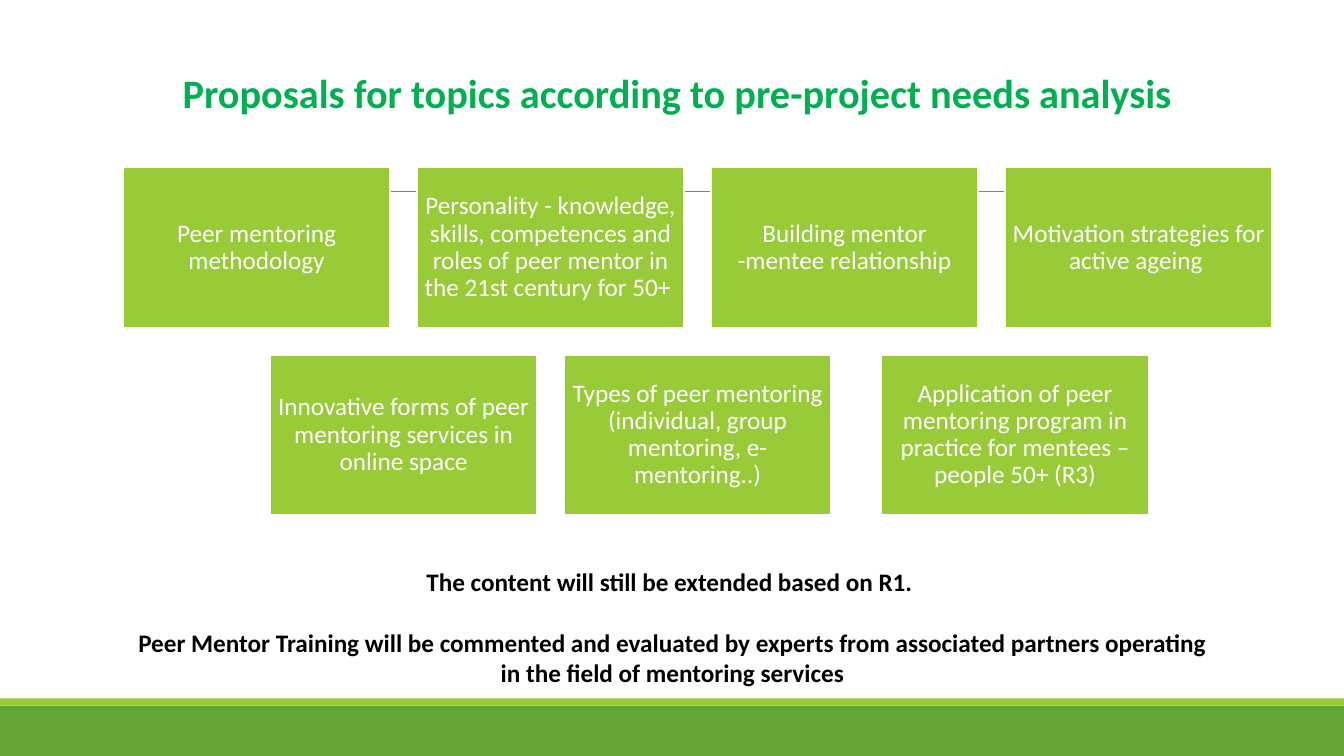
from pptx import Presentation
from pptx.dml.color import RGBColor
from pptx.enum.shapes import MSO_CONNECTOR, MSO_SHAPE
from pptx.enum.text import MSO_ANCHOR, MSO_AUTO_SIZE, PP_ALIGN
from pptx.oxml.ns import qn
from pptx.util import Inches, Pt

RECTANGLE = MSO_SHAPE.RECTANGLE
STRAIGHT = MSO_CONNECTOR.STRAIGHT
CENTER = PP_ALIGN.CENTER
MIDDLE, BOTTOM, TOP = MSO_ANCHOR.MIDDLE, MSO_ANCHOR.BOTTOM, MSO_ANCHOR.TOP
NO_AUTOFIT = MSO_AUTO_SIZE.NONE

FONT = "Calibri"
WIDTH, HEIGHT = 13.33, 7.5
LEFT = 1.22

# Card grid, in inches
CARD_WIDTH, CARD_HEIGHT = 2.65, 1.59
COLUMN_STEP = 2.916
ROW_TOP, ROW_STEP = 1.66, 1.86

# Each topic: column, row, wording
TOPICS = [
    (0, 0, "Peer mentoring methodology"),
    (1, 0, "Personality - knowledge, skills, competences and roles of "
           "peer mentor in the 21st century for 50+ "),
    (2, 0, "Building mentor\v-mentee relationship"),
    (3, 0, "Motivation strategies for active ageing "),
    (0.5, 1, "Innovative forms of peer mentoring services in online space"),
    (1.5, 1, "Types of peer mentoring (individual, group mentoring, "
             "e-mentoring..)"),
    (2.58, 1, "Application of peer mentoring program in practice for "
              "mentees – people 50+ (R3)"),
]

CLOSING = [
    "The content will still be extended based on R1. ",
    "Peer Mentor Training will be commented and evaluated by experts from "
    "associated partners operating in the field of mentoring services",
]


def color(hex_value):
    return RGBColor.from_string(hex_value)


def write(shape, texts, size, hex_value, bold=False, anchor=MIDDLE,
          inset=(0.1, 0.05), line_spacing=1.0, gap=0):
    """Fill a shape with centred paragraphs, parted by gap points."""
    frame = shape.text_frame
    frame.word_wrap = True
    frame.auto_size = NO_AUTOFIT
    frame.vertical_anchor = anchor
    frame.margin_left = frame.margin_right = Inches(inset[0])
    frame.margin_top = frame.margin_bottom = Inches(inset[1])
    for index, text in enumerate(texts):
        para = frame.add_paragraph() if index else frame.paragraphs[0]
        para.text = text
        para.alignment = CENTER
        para.line_spacing = line_spacing
        para.space_before = Pt(gap if index else 0)
        para.font.name = FONT
        para.font.size = Pt(size)
        para.font.bold = bold
        para.font.color.rgb = color(hex_value)


def add_block(page, left, top, width, height, fill, outline=None):
    block = page.shapes.add_shape(RECTANGLE, Inches(left), Inches(top),
                                  Inches(width), Inches(height))
    block.shadow.inherit = False
    block.fill.solid()
    block.fill.fore_color.rgb = color(fill)
    if outline:
        block.line.color.rgb = color(outline)
        block.line.width = Pt(1.25)
    else:
        block.line.fill.background()
    return block


def add_rule(page, left, right, top):
    rule = page.shapes.add_connector(STRAIGHT, Inches(left), Inches(top),
                                     Inches(right), Inches(top))
    rule.line.color.rgb = color("7F7F7F")
    rule.line.width = Pt(0.75)
    properties = rule._element.spPr
    properties.append(properties.makeelement(qn("a:effectLst"), {}))


def add_title(page, text):
    title = page.shapes.title
    title.left, title.top = Inches(LEFT), Inches(0.73)
    title.width, title.height = Inches(11), Inches(0.48)
    write(title, [text], 28.8, "00B050", bold=True, anchor=BOTTOM,
          line_spacing=0.85)


def add_card(page, column, row, text):
    card = add_block(page, LEFT + column * COLUMN_STEP,
                     ROW_TOP + row * ROW_STEP, CARD_WIDTH, CARD_HEIGHT,
                     "98CB37", outline="FFFFFF")
    write(card, [text], 18, "FFFFFF", inset=(0.07, 0.07), line_spacing=0.9)


def add_closing(page, texts):
    box = page.shapes.add_textbox(Inches(LEFT), Inches(5.57),
                                  Inches(10.9), Inches(1.62))
    write(box, texts, 18, "000000", bold=True, anchor=TOP, gap=22)


def main():
    deck = Presentation()
    deck.slide_width, deck.slide_height = Inches(WIDTH), Inches(HEIGHT)
    page = deck.slides.add_slide(deck.slide_layouts[5])

    # Footer bands and the rule behind the cards
    add_block(page, 0, 7, WIDTH, 0.5, "63A537")
    add_block(page, 0, 6.93, WIDTH, 0.07, "99CB38")
    add_rule(page, 1.31, 12.21, 1.9)

    # Title, topics and closing remarks
    add_title(page, "Proposals for topics according to pre-project needs "
                    "analysis")
    for column, row, text in TOPICS:
        add_card(page, column, row, text)
    add_closing(page, CLOSING)

    deck.save("out.pptx")


if __name__ == "__main__":
    main()
